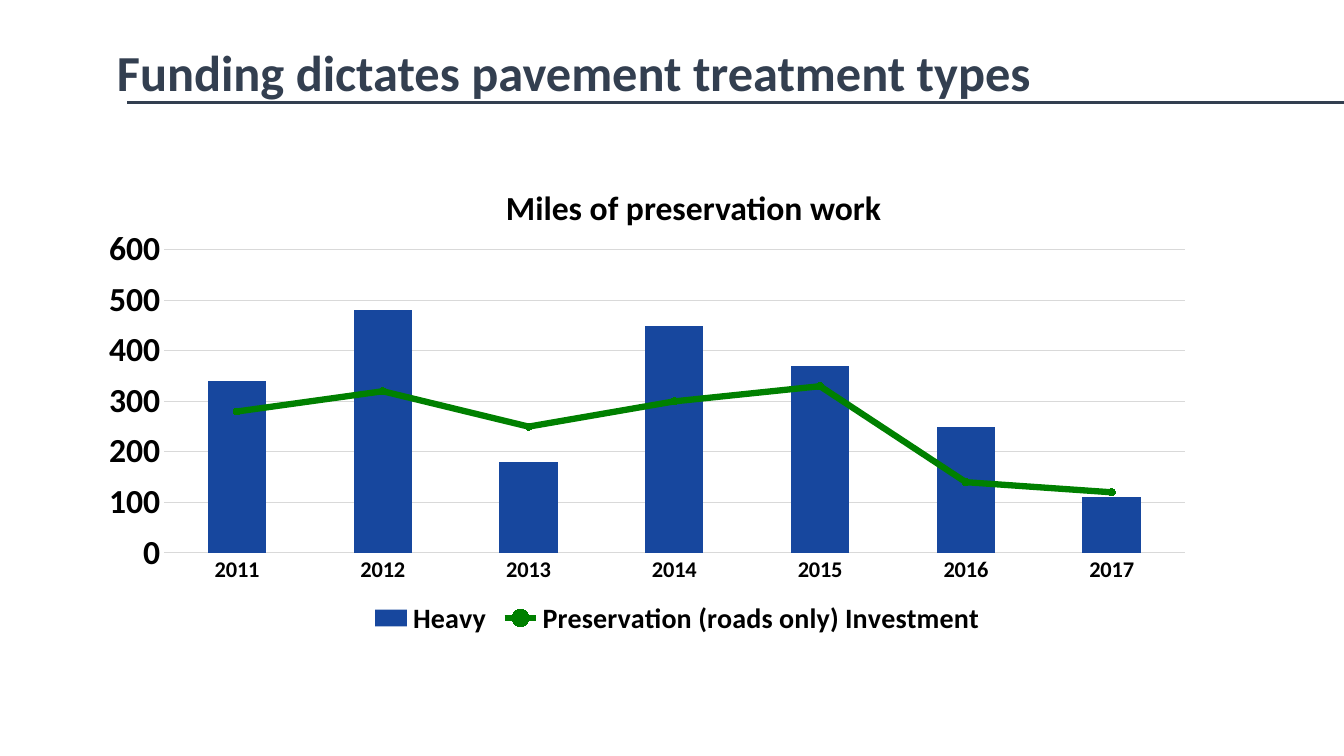
from pptx import Presentation
from pptx import util as u
from pptx.chart.data import CategoryChartData
from pptx.dml.color import RGBColor
from pptx.enum import chart as ch, shapes, text
from pptx.oxml import parse_xml
from pptx.oxml.ns import nsdecls, qn

WIDTH, HEIGHT = 13.33, 7.5
FONT = "Calibri"
SLATE, BLACK, GRID, BLUE, GREEN = "333F50", "000000", "D9D9D9", "17479E", "008000"
HEADING = "Funding dictates pavement treatment types"
CAPTION = "Miles of preservation work"
YEARS = [str(year) for year in range(2011, 2018)]
MILES = {
    "Heavy": (340, 480, 180, 450, 370, 250, 110),
    "Preservation (roads only) Investment": (280, 320, 250, 300, 330, 140, 120),
}
TOP_MILES, STEP_MILES = 600, 100
HEADING_BOX = (1.06, 0.4, 11.92, 0.69)
CAPTION_BOX = (4.92, 1.81, 4.52, 0.5)
CHART_BOX = (0.48, 1.81, 12.48, 4.55)
PLOT_SHARES = {"x": 0.092, "y": 0.147, "w": 0.811, "h": 0.661}
RULE_LEFT, RULE_TOP = 1.26, 1.02


def color(value):
    return RGBColor.from_string(value)


def inches(box):
    return [u.Inches(length) for length in box]


def style(font, size, ink=BLACK):
    font.name, font.size, font.bold = FONT, u.Pt(size), True
    font.color.rgb = color(ink)


def paint(line, ink, width):
    line.color.rgb = color(ink)
    line.width = u.Pt(width)


def write(shape, words, size, ink=BLACK):
    frame = shape.text_frame
    frame.word_wrap = True
    paragraph = frame.paragraphs[0]
    paragraph.alignment = text.PP_ALIGN.LEFT
    run = paragraph.add_run()
    run.text = words
    style(run.font, size, ink)
    return frame


def chart_xml(body):
    return parse_xml(body.replace(">", f" {nsdecls('c')}>", 1))


def place_plot(area):
    for layout in area.findall(qn("c:layout")):
        area.remove(layout)
    modes = '<c:xMode val="edge"/><c:yMode val="edge"/>'
    shares = "".join(f'<c:{key} val="{share}"/>' for key, share in PLOT_SHARES.items())
    area.insert(0, chart_xml(
        '<c:layout><c:manualLayout><c:layoutTarget val="inner"/>'
        f"{modes}{shares}</c:manualLayout></c:layout>"))


def move_to_right_axis(area):
    bars = area.find(qn("c:barChart"))
    investment = bars.findall(qn("c:ser"))[1]
    for flag in investment.findall(qn("c:invertIfNegative")):
        investment.remove(flag)
    lines = chart_xml(
        '<c:lineChart><c:grouping val="stacked"/><c:varyColors val="0"/>'
        '<c:marker val="1"/><c:axId val="501"/><c:axId val="502"/></c:lineChart>')
    lines.insert(2, investment)
    bars.addnext(lines)
    last = area.find(qn("c:valAx"))
    for kind, own, other, side, scale, crosses in (
        ("catAx", 501, 502, "b", "", "autoZero"),
        ("valAx", 502, 501, "r", f'<c:max val="{TOP_MILES}"/><c:min val="0"/>', "max"),
    ):
        axis = chart_xml(
            f'<c:{kind}><c:axId val="{own}"/><c:scaling><c:orientation val="minMax"/>{scale}'
            f'</c:scaling><c:delete val="1"/><c:axPos val="{side}"/>'
            f'<c:crossAx val="{other}"/><c:crosses val="{crosses}"/></c:{kind}>')
        last.addnext(axis)
        last = axis


def add_miles_chart(slide):
    data = CategoryChartData()
    data.categories = YEARS
    for name, values in MILES.items():
        data.add_series(name, values)
    chart = slide.shapes.add_chart(
        ch.XL_CHART_TYPE.COLUMN_STACKED, *inches(CHART_BOX), data).chart
    chart.has_title = False
    chart.font.name, chart.font.size = FONT, u.Pt(10)
    chart.font.color.rgb = color(BLACK)

    years, miles = chart.category_axis, chart.value_axis
    for axis, size in ((years, 16), (miles, 24)):
        axis.major_tick_mark = axis.minor_tick_mark = ch.XL_TICK_MARK.NONE
        style(axis.tick_labels.font, size)
    paint(years.format.line, GRID, 0.75)
    miles.format.line.fill.background()
    miles.minimum_scale, miles.maximum_scale, miles.major_unit = 0, TOP_MILES, STEP_MILES
    miles.has_major_gridlines = True
    paint(miles.major_gridlines.format.line, GRID, 0.75)

    chart.has_legend = True
    chart.legend.position = ch.XL_LEGEND_POSITION.BOTTOM
    chart.legend.include_in_layout = False
    style(chart.legend.font, 20)

    area = chart.plots[0].series[0]._element.getparent().getparent()
    move_to_right_axis(area)
    place_plot(area)
    bars, lines = chart.plots
    bars.gap_width, bars.overlap, bars.vary_by_categories = 150, 100, False
    heavy, investment = bars.series[0], lines.series[0]
    heavy.format.fill.solid()
    heavy.format.fill.fore_color.rgb = color(BLUE)
    investment.smooth = False
    paint(investment.format.line, GREEN, 4.5)
    marker = investment.marker
    marker.style, marker.size = ch.XL_MARKER_STYLE.CIRCLE, 5
    marker.format.fill.solid()
    marker.format.fill.fore_color.rgb = color(GREEN)
    paint(marker.format.line, GREEN, 0.75)


def main():
    deck = Presentation()
    deck.slide_width, deck.slide_height = inches((WIDTH, HEIGHT))
    slide = deck.slides.add_slide(deck.slide_layouts[5])

    add_miles_chart(slide)
    caption = slide.shapes.add_textbox(*inches(CAPTION_BOX))
    write(caption, CAPTION, 24).auto_size = text.MSO_AUTO_SIZE.SHAPE_TO_FIT_TEXT

    heading = slide.shapes.title
    heading.left, heading.top, heading.width, heading.height = inches(HEADING_BOX)
    frame = write(heading, HEADING, 36, SLATE)
    frame.auto_size = text.MSO_AUTO_SIZE.NONE
    frame.vertical_anchor = text.MSO_ANCHOR.MIDDLE
    frame.paragraphs[0].line_spacing = 0.9

    rule = slide.shapes.add_connector(
        shapes.MSO_CONNECTOR.STRAIGHT, *inches((RULE_LEFT, RULE_TOP, WIDTH, RULE_TOP)))
    paint(rule.line, SLATE, 2.25)
    rule._element.spPr.append(parse_xml(f"<a:effectLst {nsdecls('a')}/>"))
    deck.save("out.pptx")


if __name__ == "__main__":
    main()
